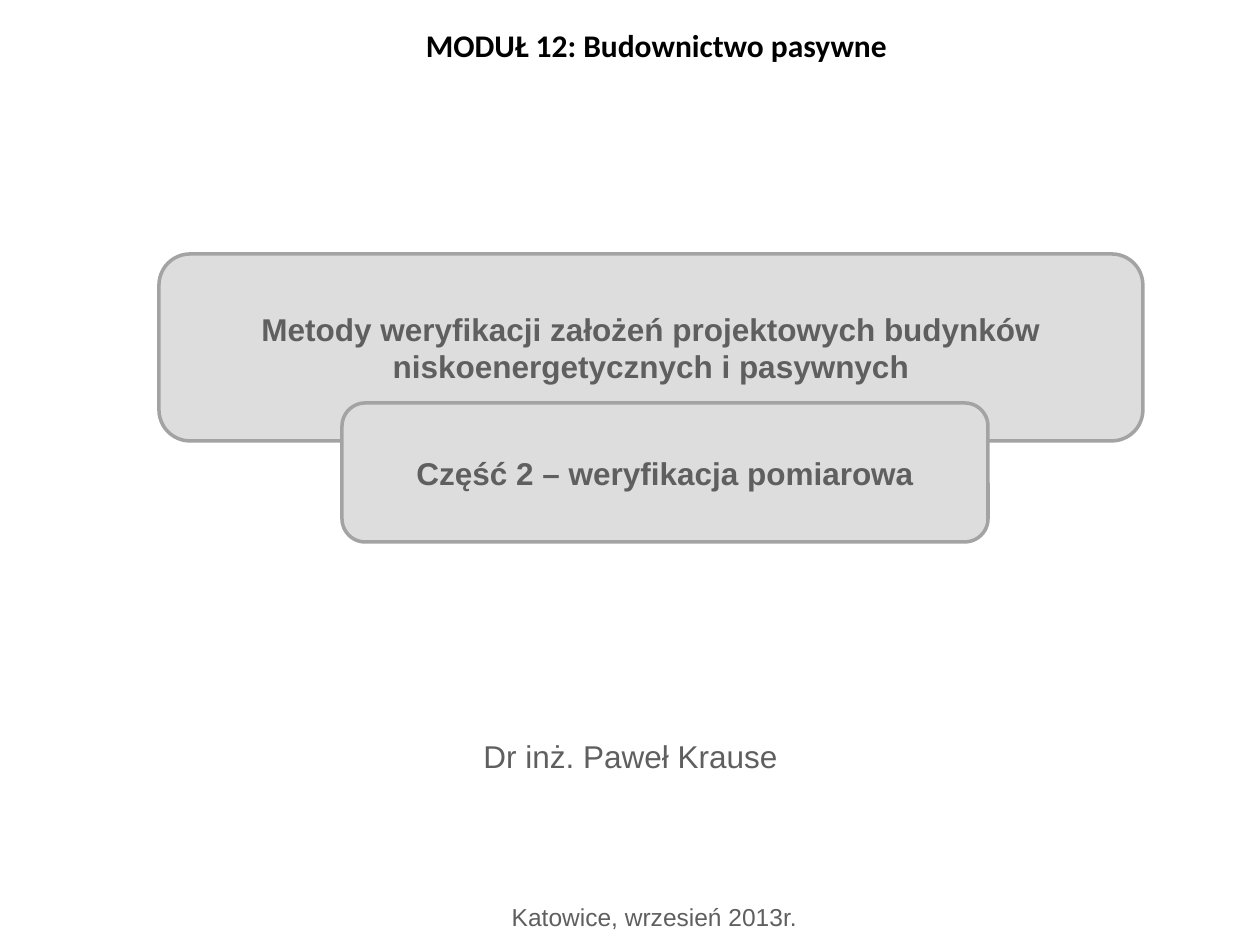
from dataclasses import dataclass

from pptx import Presentation
from pptx.dml.color import RGBColor
from pptx.enum.shapes import MSO_SHAPE
from pptx.enum.text import MSO_ANCHOR, MSO_AUTO_SIZE, PP_ALIGN
from pptx.util import Emu, Pt

ROUNDED = MSO_SHAPE.ROUNDED_RECTANGLE
TOP, MIDDLE = MSO_ANCHOR.TOP, MSO_ANCHOR.MIDDLE
CENTER = PP_ALIGN.CENTER
NO_AUTOFIT = MSO_AUTO_SIZE.NONE
PX_PER_INCH = 126
TITLE_ONLY = 5


@dataclass(frozen=True)
class Theme:
    heading_font: str = "Calibri"
    body_font: str = "Arial"
    black: str = "000000"
    gray: str = "5F5F5F"
    panel: str = "DDDDDD"
    border: str = "A3A3A3"
    border_width: int = 2
    large: int = 18
    small: int = 14


def px(length):
    return Emu(round(length * 914400 / PX_PER_INCH))


class PageBuilder:
    def __init__(self, theme, page):
        self.theme = theme
        self.page = page

    def set_text(self, box, text, anchor=TOP, **style):
        frame = box.text_frame
        frame_format = {"word_wrap": True, "auto_size": NO_AUTOFIT, "vertical_anchor": anchor}
        for name, value in frame_format.items():
            setattr(frame, name, value)
        para = frame.paragraphs[0]
        para.alignment = CENTER
        span = para.add_run()
        span.text = text
        font_format = {"name": self.theme.body_font, "size": self.theme.large, "bold": False}
        font_format.update(style)
        color = font_format.pop("color", self.theme.gray)
        font_format["size"] = Pt(font_format["size"])
        for name, value in font_format.items():
            setattr(span.font, name, value)
        span.font.color.rgb = RGBColor.from_string(color)

    def title(self, text, bounds, insets):
        box = self.page.shapes.title
        for name, value in zip(("left", "top", "width", "height"), bounds):
            setattr(box, name, px(value))
        for side, value in zip(("left", "top", "right", "bottom"), insets):
            setattr(box.text_frame, f"margin_{side}", px(value))
        self.set_text(box, text, name=self.theme.heading_font, bold=True, color=self.theme.black)

    def panel(self, text, bounds):
        box = self.page.shapes.add_shape(ROUNDED, *map(px, bounds))
        box.shadow.inherit = False
        box.fill.solid()
        box.fill.fore_color.rgb = RGBColor.from_string(self.theme.panel)
        box.line.color.rgb = RGBColor.from_string(self.theme.border)
        box.line.width = Pt(self.theme.border_width)
        self.set_text(box, text, MIDDLE, bold=True)

    def label(self, text, bounds, size):
        box = self.page.shapes.add_textbox(*map(px, bounds))
        self.set_text(box, text, size=size)


def main():
    deck = Presentation()
    deck.slide_width, deck.slide_height = px(1260), px(945)
    theme = Theme()
    builder = PageBuilder(theme, deck.slides.add_slide(deck.slide_layouts[TITLE_ONLY]))

    # Module heading
    builder.title("MODUŁ 12: Budownictwo pasywne", (174, 0, 973, 125), (0, 26, 8, 0))

    # Lecture topic, with its part number overlapping the lower edge
    builder.panel(
        "Metody weryfikacji założeń projektowych budynków niskoenergetycznych i pasywnych",
        (159, 254, 984, 187),
    )
    builder.panel("Część 2 – weryfikacja pomiarowa", (342, 403, 646, 139))

    # Author, place and date
    builder.label("Dr inż. Paweł Krause", (432, 731, 397, 84), theme.large)
    builder.label("Katowice, wrzesień 2013r.", (295, 896, 719, 42), theme.small)

    deck.save("out.pptx")


if __name__ == "__main__":
    main()
